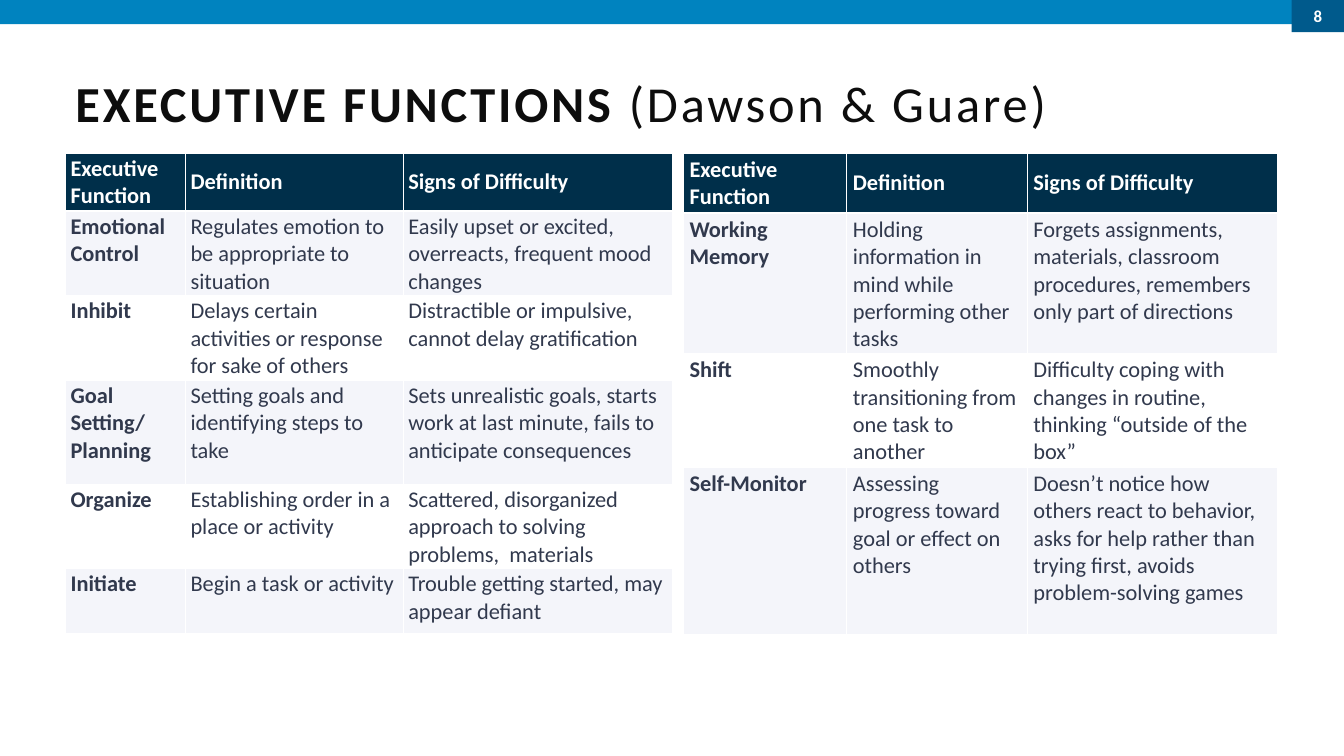
from dataclasses import dataclass

from lxml import etree
from pptx import Presentation
from pptx.dml.color import RGBColor
from pptx.enum.shapes import MSO_SHAPE
from pptx.enum.text import MSO_ANCHOR, PP_ALIGN
from pptx.oxml.ns import qn
from pptx.util import Inches, Pt

RECT = MSO_SHAPE.RECTANGLE
MIDDLE, TOP = MSO_ANCHOR.MIDDLE, MSO_ANCHOR.TOP
CENTER = PP_ALIGN.CENTER


@dataclass(frozen=True)
class Theme:
    font: str = "Calibri"
    band: str = "0083BF"
    badge: str = "005A8C"
    head: str = "002F4A"
    stripe: str = "F4F5FA"
    white: str = "FFFFFF"
    title: str = "0D0D0D"
    body: str = "31394D"
    title_size: float = 36
    cell_size: float = 16
    badge_size: float = 12
    thin: float = 0.67
    thick: float = 2


@dataclass(frozen=True)
class Box:
    left: float
    top: float
    width: float
    height: float

    def place(self) -> tuple:
        return tuple(map(Inches, (self.left, self.top, self.width, self.height)))


@dataclass(frozen=True)
class Grid:
    left: float
    side: float
    edge: float
    widths: tuple
    heights: tuple
    rows: tuple


THEME = Theme()
GRID_TOP = 1.52
HEADER = ("Executive Function", "Definition", "Signs of Difficulty")

GRIDS = (
    Grid(0.65, 0.05, 0.02, (1.19, 2.16, 2.67), (0.57, 0.83, 0.83, 1.03, 0.83, 0.64), (
        HEADER,
        ("Emotional Control", "Regulates emotion to be appropriate to situation",
         "Easily upset or excited, overreacts, frequent mood changes"),
        ("Inhibit", "Delays certain activities or response for sake of others",
         "Distractible or impulsive, cannot delay gratification"),
        ("Goal Setting/\nPlanning", "Setting goals and identifying steps to take",
         "Sets unrealistic goals, starts work at last minute, fails to anticipate consequences"),
        ("Organize", "Establishing order in a place or activity",
         "Scattered, disorganized approach to solving problems,  materials"),
        ("Initiate", "Begin a task or activity",
         "Trouble getting started, may appear defiant"),
    )),
    Grid(6.78, 0.06, 0.03, (1.62, 1.79, 2.48), (0.57, 1.35, 1.09, 1.66), (
        HEADER,
        ("Working Memory", "Holding information in mind while performing other tasks",
         "Forgets assignments, materials, classroom procedures, remembers only part of directions"),
        ("Shift", "Smoothly transitioning from one task to another",
         "Difficulty coping with changes in routine, thinking “outside of the box”"),
        ("Self-Monitor", "Assessing progress toward goal or effect on others",
         "Doesn’t notice how others react to behavior, asks for help rather than trying first, "
         "avoids problem-solving games"),
    )),
)


def add_run(para, text: str, size: float, color: str, bold: bool):
    run = para.add_run()
    run.text = text
    run.font.name = THEME.font
    run.font.size = Pt(size)
    run.font.bold = bold
    run.font.color.rgb = RGBColor.from_string(color)
    return run


def add_bar(slide, box: Box, color: str):
    bar = slide.shapes.add_shape(RECT, *box.place())
    bar.shadow.inherit = False
    bar.fill.solid()
    bar.fill.fore_color.rgb = RGBColor.from_string(color)
    bar.line.fill.background()
    return bar


def add_title(slide) -> None:
    frame = slide.shapes.add_textbox(*Box(0.65, 0.52, 12.02, 1.1).place()).text_frame
    frame.word_wrap = True
    frame.vertical_anchor = MIDDLE
    para = frame.paragraphs[0]
    para.line_spacing = 0.8
    for text, bold in (("EXECUTIVE FUNCTIONS ", True), ("(Dawson & Guare)", False)):
        run = add_run(para, text, THEME.title_size, THEME.title, bold)
        run.font._element.set("spc", "200")


def add_badge(slide) -> None:
    frame = add_bar(slide, Box(12.81, -0.01, 0.52, 0.33), THEME.badge).text_frame
    frame.vertical_anchor = MIDDLE
    para = frame.paragraphs[0]
    para.alignment = CENTER
    add_run(para, "8", THEME.badge_size, THEME.white, True)


def set_edges(cell, row: int) -> None:
    props = cell._tc.get_or_add_tcPr()
    widths = {
        "lnL": THEME.thin,
        "lnR": THEME.thin,
        "lnT": THEME.thick if row == 1 else THEME.thin,
        "lnB": THEME.thick if row == 0 else THEME.thin,
    }
    for index, (name, width) in enumerate(widths.items()):
        line = etree.Element(qn(f"a:{name}"), w=str(int(Pt(width))))
        fill = etree.SubElement(line, qn("a:solidFill"))
        etree.SubElement(fill, qn("a:srgbClr"), val=THEME.white)
        props.insert(index, line)


def fill_cell(cell, grid: Grid, row: int, col: int) -> None:
    is_head = row == 0
    cell.margin_left = cell.margin_right = Inches(grid.side)
    cell.margin_top = cell.margin_bottom = Inches(grid.edge)
    cell.vertical_anchor = MIDDLE if is_head else TOP
    if is_head or row % 2:
        cell.fill.solid()
        cell.fill.fore_color.rgb = RGBColor.from_string(THEME.head if is_head else THEME.stripe)
    else:
        cell.fill.background()
    set_edges(cell, row)
    para = cell.text_frame.paragraphs[0]
    color = THEME.white if is_head else THEME.body
    for index, text in enumerate(grid.rows[row][col].split("\n")):
        if index:
            para.add_line_break()
        add_run(para, text, THEME.cell_size, color, is_head or col == 0)


def add_grid(slide, grid: Grid) -> None:
    box = Box(grid.left, GRID_TOP, sum(grid.widths), sum(grid.heights))
    table = slide.shapes.add_table(len(grid.rows), len(HEADER), *box.place()).table
    for col, width in enumerate(grid.widths):
        table.columns[col].width = Inches(width)
    for row, height in enumerate(grid.heights):
        table.rows[row].height = Inches(height)
        for col in range(len(HEADER)):
            fill_cell(table.cell(row, col), grid, row, col)


def main() -> None:
    deck = Presentation()
    deck.slide_width, deck.slide_height = Inches(13.33), Inches(7.5)
    slide = deck.slides.add_slide(deck.slide_layouts[6])
    add_bar(slide, Box(0, 0, 13.33, 0.24), THEME.band)
    add_title(slide)
    add_badge(slide)
    for grid in GRIDS:
        add_grid(slide, grid)
    deck.save("out.pptx")


if __name__ == "__main__":
    main()
